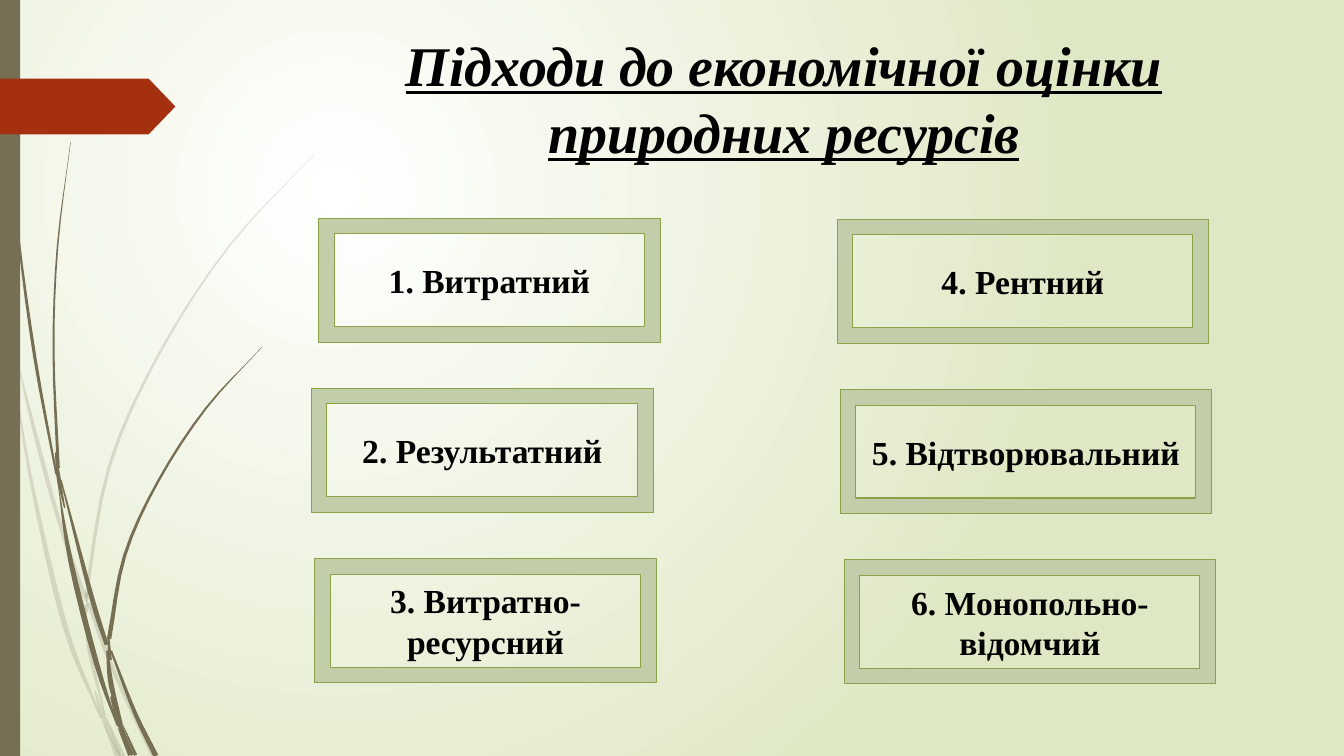
from math import hypot

from lxml import etree
from pptx import Presentation
from pptx.dml.color import RGBColor
from pptx.enum import shapes, text
from pptx.oxml.ns import qn
from pptx.util import Cm, Pt

WIDTH, HEIGHT = 33.87, 19.05
BROWN, RED, BLACK = "766F54", "A53010", "000000"
SAGE, OLIVE = "C2CEA9", "8BA249"
STEPS = 4

# Each stalk lists (x, y, thickness) in cm along its middle, from tip to root.
PALE_STALKS = [
    [(0, 7.38, .3), (.13, 8.1, .13), (.28, 8.89, 0)],
    [(.36, 8.76, 0), (.91, 11.02, .1), (1.52, 13.23, .1), (2.14, 15.05, .1)],
    [(2.24, 15.2, .1), (2.7, 16.5, .1), (3.18, 17.6, .1), (3.87, 19.05, .13)],
    [(2.67, 18.06, 0), (3.09, 19.05, .13)],
    [(.28, 8.89, 0), (.75, 11.92, .08), (1.63, 15.75, .13), (2.55, 18.1, .05)],
    [(2.14, 15.25, .05), (2.26, 16.41, .1), (2.65, 18.03, .03)],
    [(7.92, 3.89, 0), (5.8, 6.17, .04), (4.04, 8.86, .06), (2.76, 11.73, .08),
     (2.2, 14.83, .08), (2.2, 15.1, .05)],
    [(2.57, 18.14, 0), (2.96, 19.05, .12)],
    [(2.2, 14.9, .05), (2.19, 15.42, .08)],
    [(2.39, 17.4, .03), (2.6, 18.05, .1), (3.02, 19.05, .05)],
]
DARK_STALKS = [
    [(.09, 0, .02), (.19, 2.79, .03), (.46, 5.92, .05), (.88, 9.02, .08),
     (1.42, 11.95, .05)],
    [(1.54, 12.1, .03), (2.3, 15.01, .12), (2.69, 16.25, .1)],
    [(2.8, 16.4, .05), (3.4, 17.96, .1), (3.93, 19.05, .13)],
    [(1.45, 12.12, 0), (1.78, 14.14, .12), (2.43, 16.71, .13), (2.96, 18.3, .03)],
    [(1.78, 3.58, 0), (1.45, 6.22, .04), (1.35, 8.86, .05), (1.47, 11.8, .08)],
    [(3.1, 18.26, 0), (3.42, 19.03, .08)],
    [(1.4, 11.4, .03), (1.48, 12.05, .1), (1.63, 12.8, .03)],
    [(6.61, 8.74, 0), (5.19, 10.29, .05), (3.99, 12.12, .06), (3.14, 14.01, .08),
     (2.75, 16.1, .11)],
    [(2.97, 18.34, 0), (3.28, 19.03, .1)],
    [(2.7, 16.4, .05), (2.81, 17.3, .13), (3.08, 18.25, .03)],
    [(2.73, 16.05, .05), (2.77, 16.63, .1)],
    [(2.8, 17.55, .05), (3, 18.2, .12), (3.34, 19.03, .07)],
]

# Column left and top, frame width, and the frames as (shift to the right, label).
COLUMNS = [
    (0, 0, 8.61, [(.18, "1. Витратний"), (0, "2. Результатний"),
                  (.08, "3. Витратно-ресурсний")]),
    (13.25, .03, 9.35, [(0, "4. Рентний"), (.08, "5. Відтворювальний"),
                        (.18, "6. Монопольно-відомчий")]),
]


def color(value):
    return RGBColor.from_string(value)


def paint(shape, fill, line=None):
    shape.shadow.inherit = False
    shape.fill.solid()
    shape.fill.fore_color.rgb = color(fill)
    if line:
        shape.line.color.rgb = color(line)
        shape.line.width = Pt(.75)
    else:
        shape.line.fill.background()


def write(shape, words, frame_format, font_format):
    frame = shape.text_frame
    for name, value in frame_format.items():
        setattr(frame, name, value)
    paragraph = frame.paragraphs[0]
    paragraph.alignment = text.PP_ALIGN.CENTER
    run = paragraph.add_run()
    run.text = words
    run.font.color.rgb = color(BLACK)
    for name, value in {"name": "Times New Roman", "bold": True, **font_format}.items():
        setattr(run.font, name, value)


def set_background(slide):
    """Radial gradient that spreads from the upper left quarter."""
    fill = slide.background.fill
    fill.gradient()
    for stop, value, position in zip(fill.gradient_stops, ("FFFFFF", "DFE8C4"), (0, 1)):
        stop.color.rgb = color(value)
        stop.position = position
    gradient = slide.background._cSld.find(".//" + qn("a:gradFill"))
    linear = gradient.find(qn("a:lin"))
    radial = etree.Element(qn("a:path"), path="circle")
    etree.SubElement(radial, qn("a:fillToRect"), l="50000", t="50000", r="100000", b="100000")
    gradient.replace(linear, radial)


def mirror(point, center):
    return tuple(2 * c - p for p, c in zip(point, center))


def smooth_curve(points):
    """Catmull-Rom interpolation through the given points."""
    padded = [mirror(points[1], points[0]), *points, mirror(points[-2], points[-1])]
    curve = []
    for knots in zip(padded, padded[1:], padded[2:], padded[3:]):
        for step in range(STEPS):
            t = step / STEPS
            curve.append(tuple(
                b + t / 2 * (c - a + t * (2 * a - 5 * b + 4 * c - d + t * (3 * b - a - 3 * c + d)))
                for a, b, c, d in zip(*knots)))
    return curve + [points[-1]]


def add_stalk(slide, left, top, points, opacity):
    curve = smooth_curve(points) if len(points) > 2 else points
    one_side, other_side = [], []
    for index, (x, y, thickness) in enumerate(curve):
        before, after = curve[max(index - 1, 0)], curve[min(index + 1, len(curve) - 1)]
        run, rise = after[0] - before[0], after[1] - before[1]
        scale = max(thickness, .01) / 2 / hypot(run, rise)
        for side, sign in ((one_side, 1), (other_side, -1)):
            side.append((Cm(left + x - sign * rise * scale), Cm(top + y + sign * run * scale)))
    outline = one_side + other_side[::-1]
    builder = slide.shapes.build_freeform(*outline[0])
    builder.add_line_segments(outline[1:], close=True)
    stalk = builder.convert_to_shape()
    paint(stalk, BROWN)
    if opacity < 100:
        tone = stalk._element.spPr.find(qn("a:solidFill"))[0]
        etree.SubElement(tone, qn("a:alpha"), val=str(opacity * 1000))


def add_decoration(slide, left, top, height):
    for stalks, opacity in ((PALE_STALKS, 20), (DARK_STALKS, 100)):
        for points in stalks:
            add_stalk(slide, left, top, points, opacity)
    bar = slide.shapes.add_shape(
        shapes.MSO_SHAPE.RECTANGLE, Cm(left), Cm(top), Cm(.51), Cm(height))
    paint(bar, BROWN)
    tag = slide.shapes.add_shape(
        shapes.MSO_SHAPE.PENTAGON, Cm(left), Cm(top + 1.98), Cm(4.42), Cm(1.41))
    tag.adjustments[0] = .48
    paint(tag, RED)


def add_title(slide, left, top, width, height):
    title = slide.shapes.title
    title.left, title.top, title.width, title.height = map(Cm, (left, top, width, height))
    write(title, "Підходи до економічної оцінки природних ресурсів",
          {"word_wrap": True, "auto_size": text.MSO_AUTO_SIZE.NONE,
           "vertical_anchor": text.MSO_ANCHOR.TOP},
          {"size": Pt(40), "italic": True, "underline": True})


def add_approaches(slide, left, top, height):
    """Two columns of framed labels, the rows spread evenly over the height."""
    frame_height = 3.12
    for offset, drop, width, frames in COLUMNS:
        pitch = (height - frame_height) / (len(frames) - 1)
        for row, (shift, label) in enumerate(frames):
            frame = slide.shapes.add_shape(
                shapes.MSO_SHAPE.FRAME, Cm(left + offset + shift),
                Cm(top + drop + row * pitch), Cm(width), Cm(frame_height))
            paint(frame, SAGE, OLIVE)
            write(frame, label,
                  {"word_wrap": True, "vertical_anchor": text.MSO_ANCHOR.MIDDLE},
                  {"size": Pt(24)})


def main():
    presentation = Presentation()
    presentation.slide_width, presentation.slide_height = Cm(WIDTH), Cm(HEIGHT)
    slide = presentation.slides.add_slide(presentation.slide_layouts.get_by_name("Title Only"))
    set_background(slide)
    add_decoration(slide, 0, 0, HEIGHT)
    add_title(slide, 8.87, .64, 21.77, 3.68)
    add_approaches(slide, 7.85, 5.5, 11.7)
    presentation.save("out.pptx")


if __name__ == "__main__":
    main()
